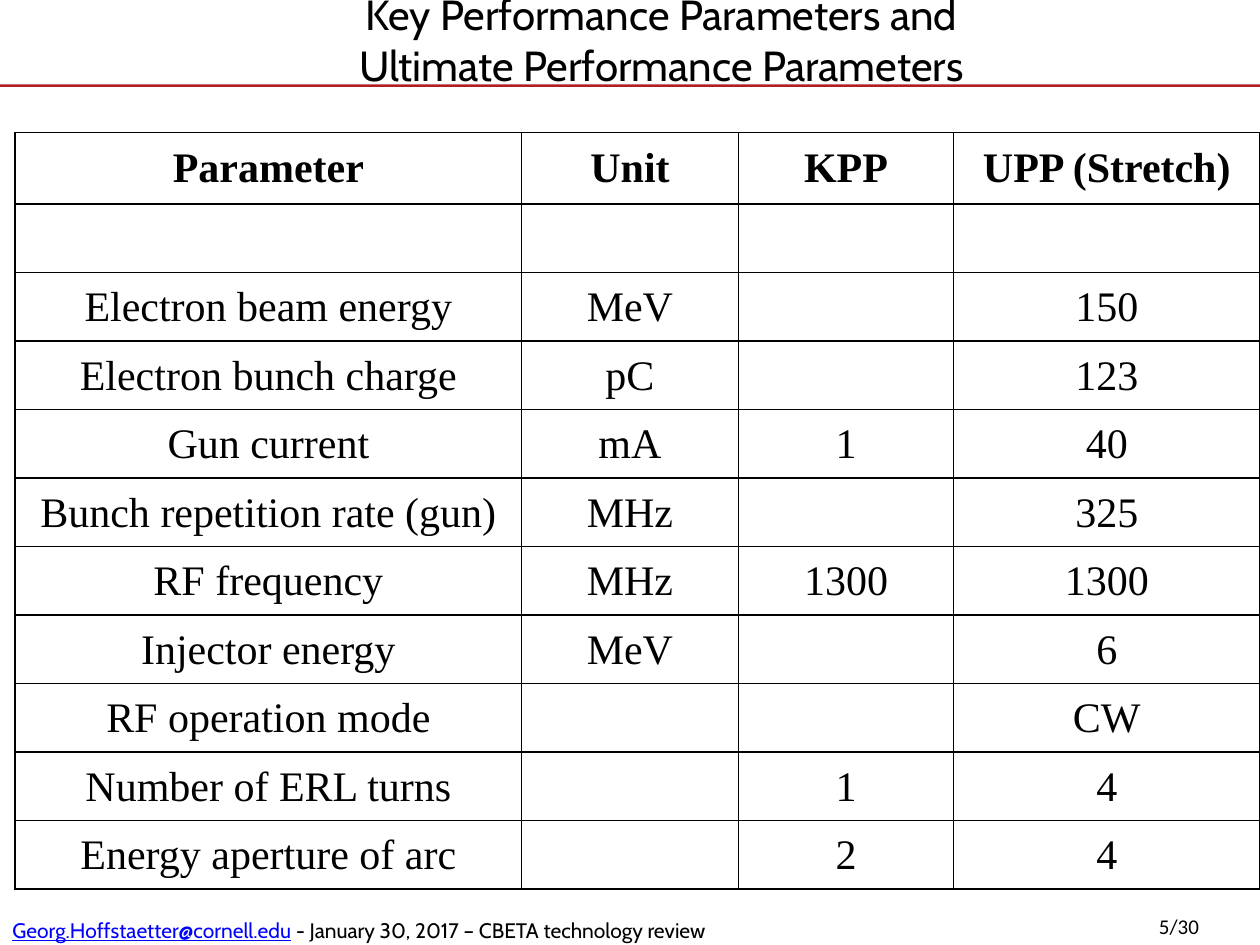
"""Build the slide of key and ultimate performance parameters."""
from lxml.etree import SubElement
from pptx import Presentation
from pptx.dml.color import RGBColor
from pptx.enum.shapes import MSO_SHAPE
from pptx.enum.text import MSO_ANCHOR, PP_ALIGN
from pptx.oxml.ns import qn
from pptx.util import Inches, Pt


def paint(target, shade):
    target.rgb = RGBColor.from_string(shade)


def style(para, face, size, bold=False):
    for run in para.runs:
        run.font.name, run.font.size, run.font.bold = face, Pt(size), bold
        paint(run.font.color, "000000")


deck = Presentation()
deck.slide_width, deck.slide_height = Inches(10), Inches(7.5)
slide = deck.slides.add_slide(deck.slide_layouts[6])
shapes = slide.shapes

page = shapes.add_textbox(Inches(9.1), Inches(7.2), Inches(0.9), Inches(0.3)).text_frame
page.word_wrap = False
page.text = "5/30"
style(page.paragraphs[0], "Calibri", 12)

foot = shapes.add_textbox(0, Inches(7.23), Inches(5.75), Inches(0.27)).text_frame
foot.word_wrap = False
para = foot.paragraphs[0]
for part in ("Georg.Hoffstaetter@cornell.edu", " - January 30, 2017 – CBETA technology review"):
    para.add_run().text = part
style(para, "Cabin", 12)
mail = para.runs[0].font
mail.underline = True
paint(mail.color, "0000FF")

rule = shapes.add_shape(MSO_SHAPE.RECTANGLE, 0, Inches(0.67), deck.slide_width, Inches(0.02))
rule.shadow.inherit = False
rule.fill.solid()
paint(rule.fill.fore_color, "B21F22")
rule.line.fill.background()

title = shapes.add_textbox(Inches(2.35), Inches(-0.1), Inches(5.8), Inches(0.82)).text_frame
title.word_wrap = True
title.vertical_anchor = MSO_ANCHOR.MIDDLE
title.margin_left = title.margin_right = title.margin_top = title.margin_bottom = 0
para = title.paragraphs[0]
para.text = "Key Performance Parameters and\nUltimate Performance Parameters"
para.alignment = PP_ALIGN.CENTER
style(para, "Cabin", 24)

rows = [
    ("Parameter", "Unit", "KPP", "UPP (Stretch)"),
    ("", "", "", ""),
    ("Electron beam energy", "MeV", "", "150"),
    ("Electron bunch charge", "pC", "", "123"),
    ("Gun current", "mA", "1", "40"),
    ("Bunch repetition rate (gun)", "MHz", "", "325"),
    ("RF frequency", "MHz", "1300", "1300"),
    ("Injector energy", "MeV", "", "6"),
    ("RF operation mode", "", "", "CW"),
    ("Number of ERL turns", "", "1", "4"),
    ("Energy aperture of arc", "", "2", "4"),
]
wide, high, head = 9.88, 6.01, 0.57
frame = shapes.add_table(len(rows), 4, Inches(0.12), Inches(1.05), Inches(wide), Inches(high))
table = frame.table
table.first_row = table.horz_banding = False
for col, width in zip(table.columns, (4.02, 1.72, 1.71, 2.43)):
    col.width = Inches(width)

for r, words in enumerate(rows):
    table.rows[r].height = Inches((high - head) / (len(rows) - 1) if r else head)
    for c, word in enumerate(words):
        cell = table.cell(r, c)
        cell.margin_left = cell.margin_right = cell.margin_top = Inches(0.01)
        cell.margin_bottom = 0
        cell.vertical_anchor = MSO_ANCHOR.MIDDLE
        props = cell._tc.get_or_add_tcPr()
        for side in ("a:lnL", "a:lnR", "a:lnT", "a:lnB"):
            edge = SubElement(props, qn(side), w=str(Pt(1)))
            ink = SubElement(edge, qn("a:solidFill"))
            SubElement(ink, qn("a:srgbClr"), val="000000")
        cell.fill.background()
        if word:
            cell.text_frame.text = word
            para = cell.text_frame.paragraphs[0]
            para.alignment = PP_ALIGN.CENTER
            style(para, "Times New Roman", 24, r == 0)

deck.save("out.pptx")
